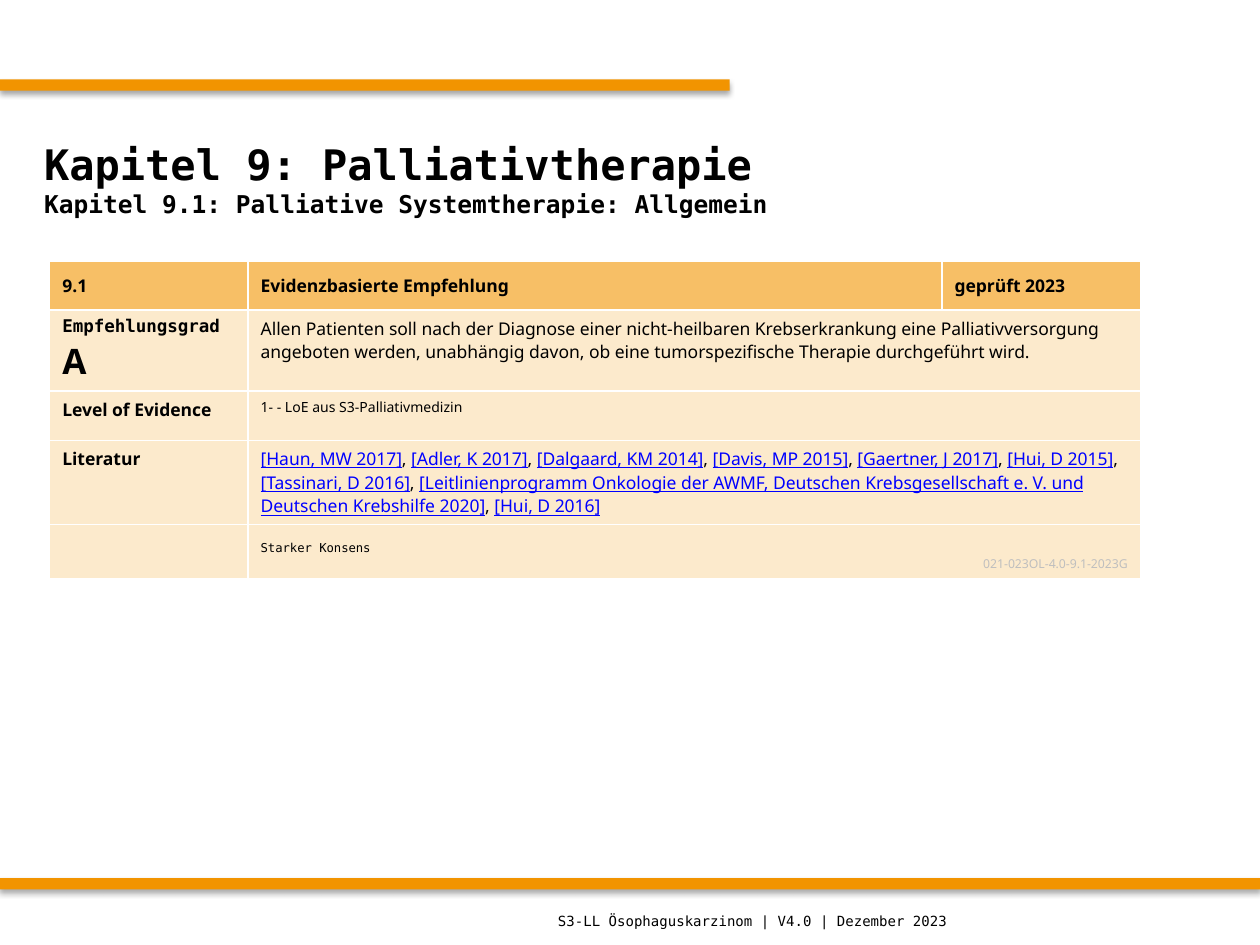
import pptx
import pptx.util
import pptx.dml.color
import pptx.enum.shapes
import pptx.enum.text
import pptx.oxml
import pptx.oxml.ns

Pt = pptx.util.Pt
RGB = pptx.dml.color.RGBColor
Align = pptx.enum.text.PP_ALIGN
Anchor = pptx.enum.text.MSO_ANCHOR

ORANGE = RGB(0xF2, 0x94, 0x00)
AMBER = RGB(0xF7, 0xBF, 0x66)
CREAM = RGB(0xFC, 0xEA, 0xCC)
BLACK = RGB(0, 0, 0)
BLUE = RGB(0, 0, 0xFF)
GREY = RGB(0xBF, 0xBF, 0xBF)
MONO = "DejaVu Sans Mono"
SANS = "Noto Sans"
WIDTH = pptx.util.Inches(10)
HEIGHT = pptx.util.Inches(7.5)

SHADOW = (
    '<a:effectLst %s><a:outerShdw blurRad="39370" dist="22860" dir="5400000" rotWithShape="0">'
    '<a:srgbClr val="000000"><a:alpha val="35000"/></a:srgbClr>'
    '</a:outerShdw></a:effectLst>' % pptx.oxml.ns.nsdecls("a")
)

SOURCES = [
    "[Haun, MW 2017]", "[Adler, K 2017]", "[Dalgaard, KM 2014]",
    "[Davis, MP 2015]", "[Gaertner, J 2017]", "[Hui, D 2015]",
    "[Tassinari, D 2016]",
    "[Leitlinienprogramm Onkologie der AWMF, Deutschen Krebsgesellschaft e. V. "
    "und Deutschen Krebshilfe 2020]",
    "[Hui, D 2016]",
]


def scale(left, top, width, height):
    return [int(part * full / 100) for part, full in
            zip((left, top, width, height), (WIDTH, HEIGHT) * 2)]


def style(para, size=10, face=SANS, bold=False, color=BLACK, align=Align.LEFT):
    para.alignment = align
    font = para.font
    font.size, font.name, font.bold = Pt(size), face, bold
    font.color.rgb = color


def write(frame, *lines):
    for index, (text, look) in enumerate(lines):
        para = frame.add_paragraph() if index else frame.paragraphs[0]
        para.text = text
        style(para, **look)


def add_bar(slide, box):
    bar = slide.shapes.add_shape(pptx.enum.shapes.MSO_SHAPE.RECTANGLE, *box)
    bar.fill.solid()
    bar.fill.fore_color.rgb = ORANGE
    bar.line.fill.background()
    bar._element.spPr.append(pptx.oxml.parse_xml(SHADOW))


def add_title(slide, box):
    title = slide.shapes.title
    title.left, title.top, title.width, title.height = box
    title.text_frame.vertical_anchor = Anchor.MIDDLE
    write(title.text_frame,
          ("Kapitel 9: Palliativtherapie", dict(size=24, face=MONO, bold=True)),
          ("Kapitel 9.1: Palliative Systemtherapie: Allgemein",
           dict(size=14, face=MONO, bold=True)))


def add_links(para):
    style(para)
    for index, source in enumerate(SOURCES):
        if index:
            para.add_run().text = ", "
        run = para.add_run()
        run.text = source
        run.font.color.rgb = BLUE
        run.font.underline = True


def add_table(slide, box):
    left, top, width, height = box
    table = slide.shapes.add_table(5, 3, left, top, width, height).table
    for column, share in zip(table.columns, (2, 7, 2)):
        column.width = int(width * share / 11)
    for row, share in zip(table.rows, (39, 64, 39, 66, 43)):
        row.height = int(height * share / 251)
    for index, row in enumerate(table.rows):
        for cell in row.cells:
            cell.fill.solid()
            cell.fill.fore_color.rgb = CREAM if index else AMBER
            cell.vertical_anchor = Anchor.TOP if index else Anchor.MIDDLE
        if index:
            table.cell(index, 1).merge(table.cell(index, 2))

    bold = dict(bold=True)
    texts = {
        (0, 0): [("9.1", bold)],
        (0, 1): [("Evidenzbasierte Empfehlung", bold)],
        (0, 2): [("geprüft 2023", bold)],
        (1, 0): [("Empfehlungsgrad", dict(face=MONO, bold=True)),
                 ("A", dict(size=20, bold=True))],
        (1, 1): [("Allen Patienten soll nach der Diagnose einer nicht-heilbaren "
                  "Krebserkrankung eine Palliativversorgung angeboten werden, "
                  "unabhängig davon, ob eine tumorspezifische Therapie "
                  "durchgeführt wird.", {})],
        (2, 0): [("Level of Evidence", bold)],
        (2, 1): [("1- - LoE aus S3-Palliativmedizin", dict(size=8))],
        (3, 0): [("Literatur", bold)],
        (4, 1): [("Starker Konsens", dict(size=7, face=MONO)),
                 ("021-023OL-4.0-9.1-2023G",
                  dict(size=7, color=GREY, align=Align.RIGHT))],
    }
    for place, lines in texts.items():
        write(table.cell(*place).text_frame, *lines)
    add_links(table.cell(3, 1).text_frame.paragraphs[0])
    table.cell(4, 1).vertical_anchor = Anchor.BOTTOM


def add_footer(slide, box):
    frame = slide.shapes.add_textbox(*box).text_frame
    frame.word_wrap = True
    frame.vertical_anchor = Anchor.MIDDLE
    write(frame, ("S3-LL Ösophaguskarzinom | V4.0 | Dezember 2023",
                  dict(size=8, face=MONO)))


def main():
    deck = pptx.Presentation()
    deck.slide_width, deck.slide_height = WIDTH, HEIGHT
    slide = deck.slides.add_slide(deck.slide_layouts[5])
    add_bar(slide, scale(0, 8.4, 57.9, 1.2))
    add_bar(slide, scale(0, 92.93, 100, 1.2))
    add_title(slide, scale(2.5, 11.07, 95, 15.6))
    add_table(slide, scale(3.95, 27.6, 86.55, 33.6))
    add_footer(slide, scale(43.3, 94.8, 55.1, 5.2))
    deck.save("out.pptx")


if __name__ == "__main__":
    main()
